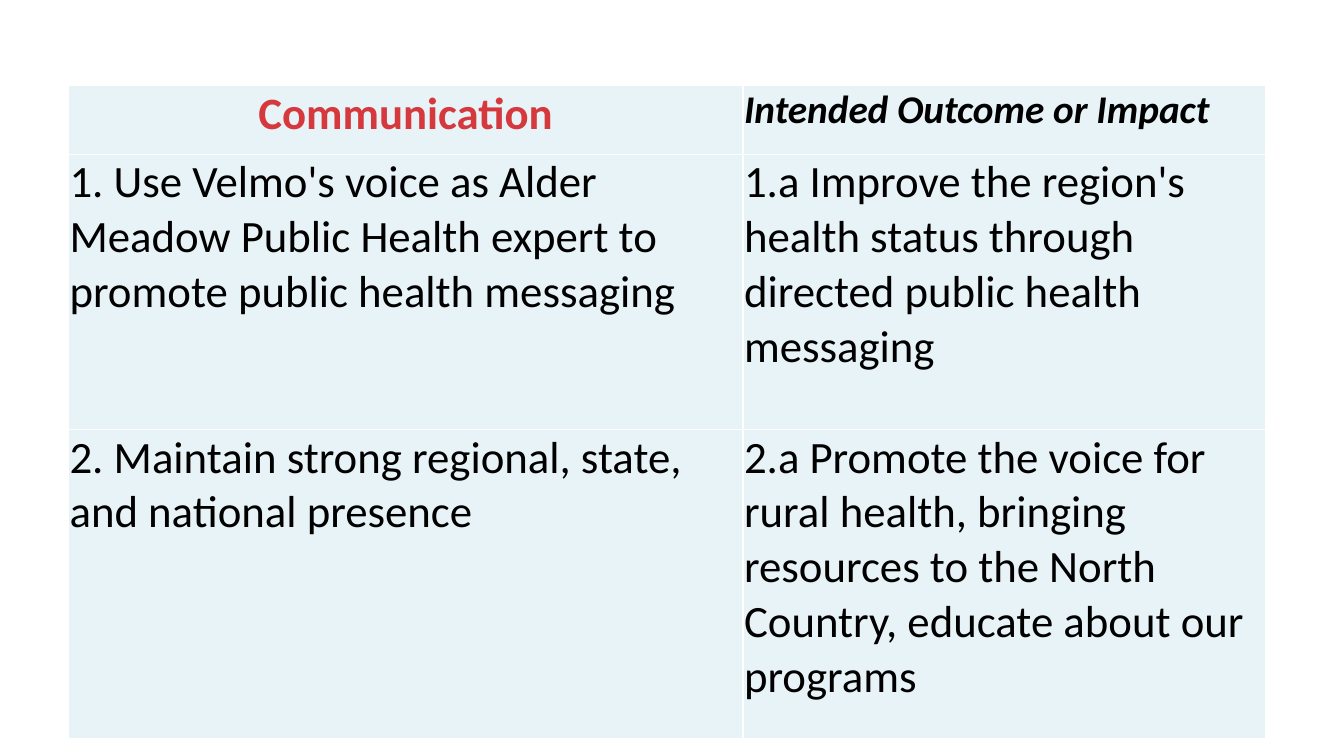
import pptx
import pptx.util
import pptx.dml.color
import pptx.enum.text
import pptx.oxml
import pptx.oxml.ns

Inches = pptx.util.Inches
WIDE, HIGH = 13.33, 7.5

THEME = {
    "font": "Calibri",
    "fill": "E8F3F7",
    "edge": "FFFFFF",
    "text": "000000",
    "accent": "D5393D",
    "body": 32,
    "label": 28,
}

# Font formats by role
BODY = {"size": THEME["body"], "color": THEME["text"], "bold": False, "italic": False}
TITLE = {**BODY, "color": THEME["accent"], "bold": True}
LABEL = {**BODY, "size": THEME["label"], "bold": True, "italic": True}

COLS = [6.69, 5.18]
ROWS = [0.68, 2.73, 3.07]
GOALS = [
    [("Communication", TITLE), ("Intended Outcome or Impact", LABEL)],
    [("1. Use Velmo's voice as Alder Meadow Public Health expert to promote "
      "public health messaging", BODY),
     ("1.a Improve the region's health status through directed public health "
      "messaging", BODY)],
    [("2. Maintain strong regional, state, and national presence", BODY),
     ("2.a Promote the voice for rural health, bringing resources to the North "
      "Country, educate about our programs", BODY)],
]


def color(code):
    return pptx.dml.color.RGBColor.from_string(code)


def border(cell):
    """Draw a thin line on all four sides; lines go before the fill."""
    props = cell._tc.get_or_add_tcPr()
    for spot, side in enumerate(("lnL", "lnR", "lnT", "lnB")):
        line = pptx.oxml.parse_xml(
            f'<a:{side} {pptx.oxml.ns.nsdecls("a")} w="12700"><a:solidFill>'
            f'<a:srgbClr val="{THEME["edge"]}"/></a:solidFill></a:{side}>')
        props.insert(spot, line)


def write(cell, text, style):
    margins = {"margin_left": 0.01, "margin_right": 0.01,
               "margin_top": 0.01, "margin_bottom": 0}
    for name, size in margins.items():
        setattr(cell, name, Inches(size))
    cell.fill.solid()
    cell.fill.fore_color.rgb = color(THEME["fill"])
    border(cell)

    # Text
    para = cell.text_frame.paragraphs[0]
    align = pptx.enum.text.PP_ALIGN
    para.alignment = align.CENTER if style is TITLE else align.LEFT
    run = para.add_run()
    run.text = text
    look = {"name": THEME["font"], "size": pptx.util.Pt(style["size"]),
            "bold": style["bold"], "italic": style["italic"]}
    for name, value in look.items():
        setattr(run.font, name, value)
    run.font.color.rgb = color(style["color"])


def goals(slide, left, top, width, height):
    """Fill the box with the goals table, sharing it out by COLS and ROWS."""
    box = [Inches(n) for n in (left, top, width, height)]
    table = slide.shapes.add_table(len(ROWS), len(COLS), *box).table
    for name in ("first_row", "horz_banding"):
        setattr(table, name, False)
    for col, share in zip(table.columns, COLS):
        col.width = Inches(width * share / sum(COLS))
    for row, share in zip(table.rows, ROWS):
        row.height = Inches(height * share / sum(ROWS))
    for r, line in enumerate(GOALS):
        for c, (text, style) in enumerate(line):
            write(table.cell(r, c), text, style)


def main():
    deck = pptx.Presentation()
    deck.slide_width, deck.slide_height = Inches(WIDE), Inches(HIGH)
    slide = deck.slides.add_slide(deck.slide_layouts[6])
    goals(slide, 0.68, 0.85, sum(COLS), sum(ROWS))
    deck.save("out.pptx")


if __name__ == "__main__":
    main()
